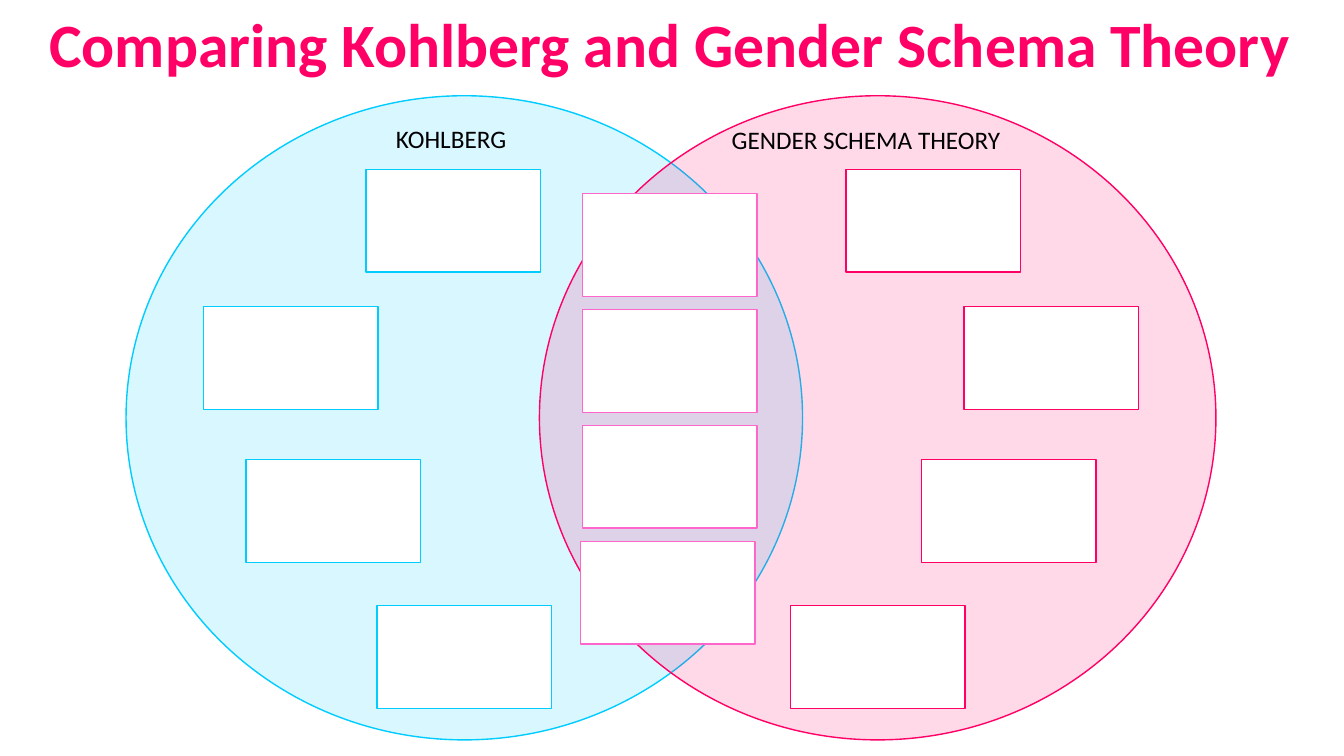
from lxml import etree
from pptx import Presentation
from pptx.dml.color import RGBColor
from pptx.enum.shapes import MSO_SHAPE
from pptx.enum.text import MSO_ANCHOR, PP_ALIGN
from pptx.oxml.ns import qn
from pptx.util import Inches, Pt

OVAL = MSO_SHAPE.OVAL
RECTANGLE = MSO_SHAPE.RECTANGLE
TOP = MSO_ANCHOR.TOP
CENTER = PP_ALIGN.CENTER

CYAN = RGBColor(0x00, 0xCC, 0xFF)
PINK = RGBColor(0xFF, 0x00, 0x66)
ORCHID = RGBColor(0xFF, 0x66, 0xCC)
WHITE = RGBColor(0xFF, 0xFF, 0xFF)
BLACK = RGBColor(0x00, 0x00, 0x00)

CIRCLE_SIZE = (6.71, 6.39)
BOX_SIZE = (1.73, 1.02)


def add_outlined(kind, left, top, size, fill, line):
    shape = slide.shapes.add_shape(
        kind, Inches(left), Inches(top), Inches(size[0]), Inches(size[1]))
    shape.shadow.inherit = False
    shape.fill.solid()
    shape.fill.fore_color.rgb = fill
    shape.line.color.rgb = line
    shape.line.width = Pt(1)
    return shape


def write_text(shape, text, size=18, color=BLACK, bold=False):
    frame = shape.text_frame
    frame.word_wrap = True
    frame.vertical_anchor = TOP
    paragraph = frame.paragraphs[0]
    paragraph.alignment = CENTER
    paragraph.line_spacing = 1.0
    run = paragraph.add_run()
    run.text = text
    run.font.name = "Calibri"
    run.font.size = Pt(size)
    run.font.bold = bold
    run.font.color.rgb = color


presentation = Presentation()
presentation.slide_width = Inches(13.33)
presentation.slide_height = Inches(7.5)
slide = presentation.slides.add_slide(presentation.slide_layouts[5])

# Title
title = slide.shapes.title
title.left, title.top = Inches(-0.02), Inches(0.01)
title.width, title.height = Inches(13.34), Inches(0.84)
write_text(title, "Comparing Kohlberg and Gender Schema Theory",
           size=44, color=PINK, bold=True)

# Overlapping translucent circles
for left, color in ((1.25, CYAN), (5.35, PINK)):
    circle = add_outlined(OVAL, left, 0.95, CIRCLE_SIZE, color, color)
    fill_color = circle.fill._xPr.find(qn("a:solidFill"))[0]
    etree.SubElement(fill_color, qn("a:alpha")).set("val", "15000")

# Empty answer boxes: shared, Kohlberg, gender schema theory
shared_boxes = [(5.78, 1.92 + 1.15 * row) for row in range(3)] + [(5.76, 5.37)]
side_tops = (1.68, 3.04, 4.56, 6.01)
box_groups = (
    (ORCHID, shared_boxes),
    (CYAN, zip((3.63, 2.02, 2.44, 3.74), side_tops)),
    (PINK, zip((8.39, 9.56, 9.14, 7.84), side_tops)),
)
for color, positions in box_groups:
    for left, top in positions:
        add_outlined(RECTANGLE, left, top, BOX_SIZE, WHITE, color)

# Circle headings
for text, left, top, width in (("KOHLBERG", 3.61, 1.17, 1.73),
                               ("GENDER SCHEMA THEORY", 7.06, 1.18, 3.06)):
    heading = slide.shapes.add_textbox(
        Inches(left), Inches(top), Inches(width), Inches(0.4))
    write_text(heading, text)

presentation.save("out.pptx")
